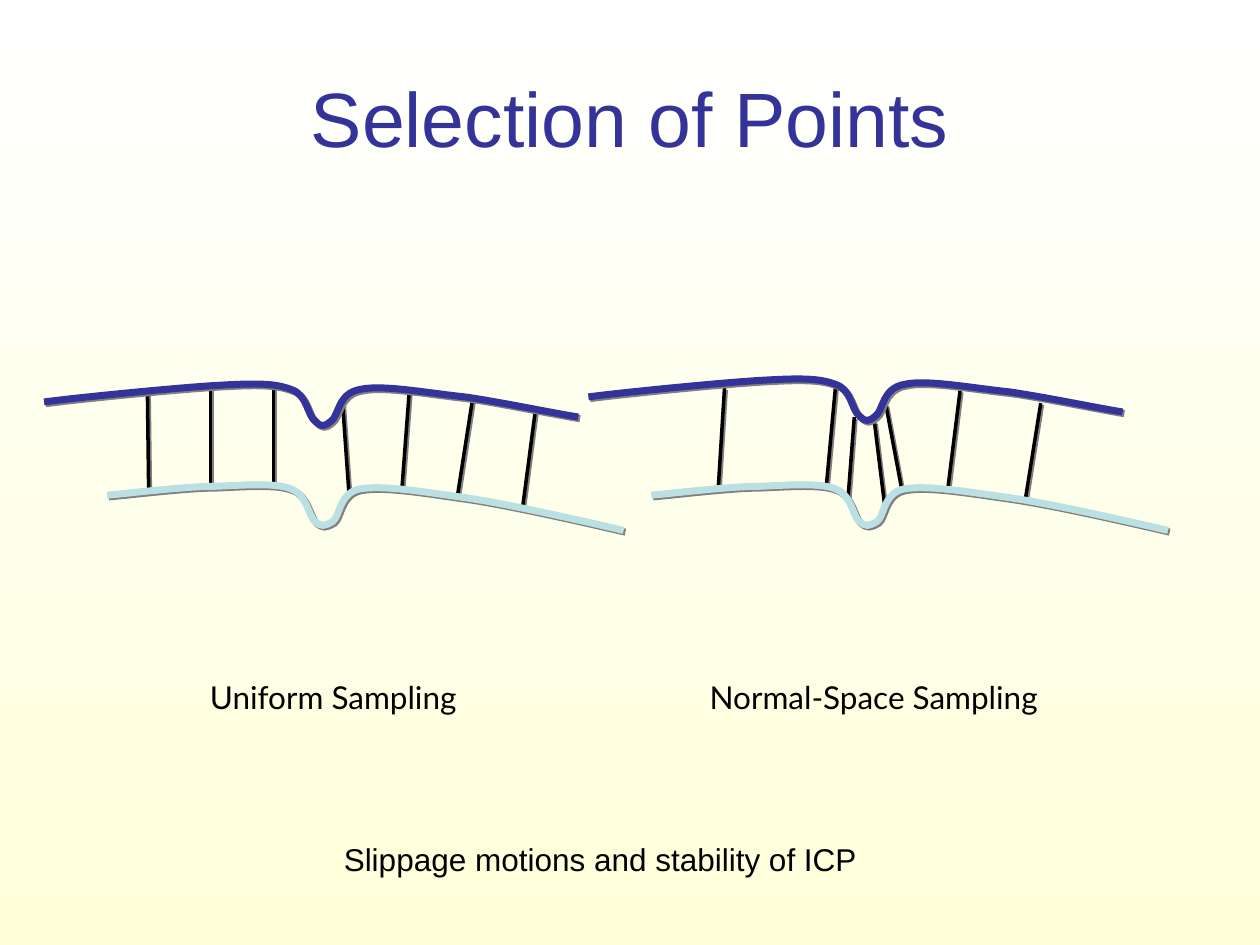
import pptx
import pptx.util
import pptx.dml.color
import pptx.enum.shapes
import pptx.enum.text
import pptx.oxml
import pptx.oxml.ns

prs = pptx.Presentation()
prs.slide_width, prs.slide_height = pptx.util.Inches(10), pptx.util.Inches(7.5)
COL, ROW = prs.slide_width / 10, prs.slide_height / 7.5  # grid of 10 columns, 7.5 rows
s = prs.slides.add_slide(prs.slide_layouts[6])

SHADOW = (
    f'<a:effectLst {pptx.oxml.ns.nsdecls("a")}>'
    '<a:outerShdw dist="17960" dir="2700000" algn="ctr" rotWithShape="0">'
    '<a:srgbClr val="808080"/></a:outerShdw></a:effectLst>'
)
CURVE = f'<a:cubicBezTo {pptx.oxml.ns.nsdecls("a")}/>'


def rgb(value):
    return pptx.dml.color.RGBColor.from_string(value)


def stroke(sp, color, width):
    sp.line.color.rgb = rgb(color)
    sp.line.width = pptx.util.Pt(width)
    sp._element.spPr.append(pptx.oxml.parse_xml(SHADOW))


# Background: white fading down to pale yellow
fill = s.background.fill
fill.gradient()
fill.gradient_angle = 270
for stop, color, position in zip(fill.gradient_stops, ("FFFFFF", "FEFFD9"), (0, 1)):
    stop.color.rgb = rgb(color)
    stop.position = position

# Surfaces: start point, then cubic segments (two handles and an end)
upper = [(0.35, 3.19),
         (0.57, 3.16), (1.37, 3.08), (1.7, 3.06),
         (2.03, 3.04), (2.18, 3.04), (2.31, 3.09),
         (2.44, 3.13), (2.44, 3.3), (2.5, 3.34),
         (2.55, 3.39), (2.57, 3.39), (2.63, 3.34),
         (2.69, 3.3), (2.68, 3.12), (2.86, 3.09),
         (3.03, 3.05), (3.4, 3.12), (3.69, 3.15),
         (3.97, 3.19), (4.4, 3.28), (4.59, 3.31)]
lower = [(0.85, 3.93),
         (0.99, 3.92), (1.46, 3.86), (1.7, 3.86),
         (1.95, 3.85), (2.18, 3.83), (2.31, 3.88),
         (2.44, 3.93), (2.45, 4.1), (2.5, 4.14),
         (2.55, 4.18), (2.57, 4.18), (2.64, 4.14),
         (2.7, 4.1), (2.69, 3.91), (2.86, 3.88),
         (3.04, 3.85), (3.34, 3.9), (3.69, 3.95),
         (4.04, 4), (4.69, 4.15), (4.95, 4.21)]

# Matched point pairs: x1, y1, x2, y2
uniform = [(1.17, 3.1, 1.18, 3.9), (1.67, 3.08, 1.67, 3.84), (2.17, 3.08, 2.17, 3.85),
           (2.72, 3.21, 2.77, 3.92), (3.75, 3.17, 3.63, 3.94),
           (3.25, 3.08, 3.19, 3.88), (4.25, 3.25, 4.15, 4.01)]
normal = [(5.75, 3.08, 5.7, 3.88), (6.63, 3.08, 6.56, 3.84), (6.78, 3.31, 6.73, 3.96),
          (6.94, 3.35, 7.02, 4), (7.62, 3.1, 7.52, 3.9),
          (7.03, 3.21, 7.16, 3.9), (8.26, 3.2, 8.14, 3.95)]

# Two panels: pairs below, then both surfaces, shifted as a whole
for pairs, dx, lift in ((uniform, 0, 0), (normal, 4.32, -0.04)):
    for x1, y1, x2, y2 in pairs:
        sp = s.shapes.add_connector(
            pptx.enum.shapes.MSO_CONNECTOR.STRAIGHT,
            round(x1 * COL), round(y1 * ROW), round(x2 * COL), round(y2 * ROW))
        stroke(sp, "000000", 2)
    for knots, dy, color in ((upper, lift, "333399"), (lower, 0, "BBE0E3")):
        points = [((x + dx) * COL, (y + dy) * ROW) for x, y in knots]
        fb = s.shapes.build_freeform(*points[0])
        fb.add_line_segments(points[1:], close=False)
        sp = fb.convert_to_shape()
        # Join every three line segments into one cubic curve
        lines = sp._element.findall(".//" + pptx.oxml.ns.qn("a:lnTo"))
        for i in range(0, len(lines), 3):
            curve = pptx.oxml.parse_xml(CURVE)
            lines[i].addprevious(curve)
            for line in lines[i:i + 3]:
                curve.append(line[0])
                line.getparent().remove(line)
        sp.fill.background()
        stroke(sp, color, 4)

# Title, captions and closing line
CENTER, LEFT = pptx.enum.text.PP_ALIGN.CENTER, pptx.enum.text.PP_ALIGN.LEFT
MIDDLE, TOP = pptx.enum.text.MSO_ANCHOR.MIDDLE, pptx.enum.text.MSO_ANCHOR.TOP
for text, (x, y, w, h), size, name, color, align, anchor, wrap in (
    ("Selection of Points", (0.5, 0.3, 9, 1.25), 44, "Arial", "333399", CENTER, MIDDLE, True),
    ("Uniform Sampling", (1.24, 5.33, 2.81, 0.5), 18, "Lato", "000000", CENTER, TOP, False),
    ("Normal-Space Sampling", (5.12, 5.33, 3.63, 0.5), 18, "Lato", "000000", CENTER, TOP, False),
    ("Slippage motions and stability of ICP", (2.63, 6.62, 4.38, 0.4), 18, "Arial", "000000",
     LEFT, TOP, False),
):
    sp = s.shapes.add_textbox(round(x * COL), round(y * ROW), round(w * COL), round(h * ROW))
    tf = sp.text_frame
    for key, value in {"word_wrap": wrap, "vertical_anchor": anchor}.items():
        setattr(tf, key, value)
    p = tf.paragraphs[0]
    p.alignment = align
    r = p.add_run()
    r.text = text
    for key, value in {"size": pptx.util.Pt(size), "name": name}.items():
        setattr(r.font, key, value)
    r.font.color.rgb = rgb(color)

prs.save("out.pptx")
